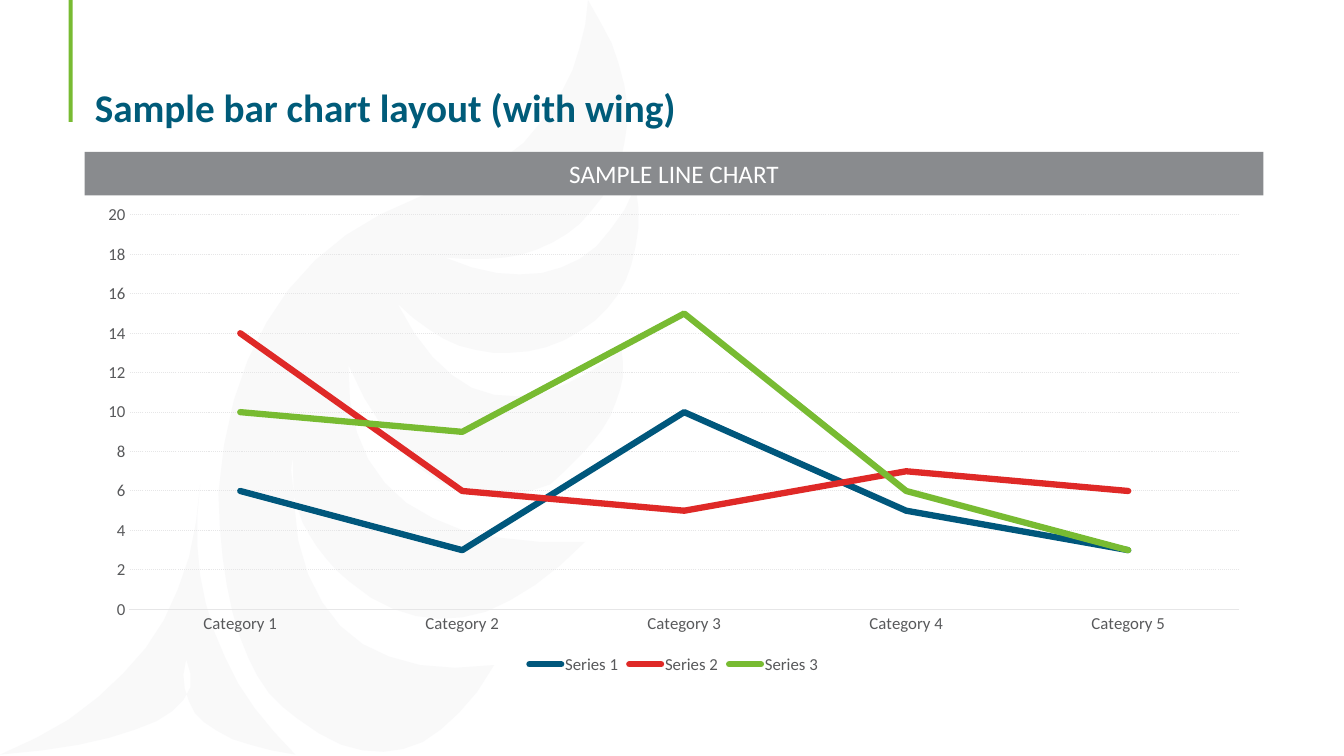
"""Build a title slide with a line chart over a pale wing."""
import pptx
import pptx.chart.data
import pptx.dml.color
import pptx.enum.chart
import pptx.enum.dml
import pptx.enum.shapes
import pptx.enum.text
import pptx.oxml
import pptx.oxml.ns
import pptx.util
from lxml import etree

Pt = pptx.util.Pt
FONT = "Calibri"
GREEN = "78BB32"
TEXT_GREY = "58595B"
RULE_GREY = "E6E6E7"
STEPS = 10
FEATHERS = [
    (353, 475), (288, 535), (212, 513), (171, 454), (156, 352), (206, 207),
    (332, 130), (394, 78), (420, 0), (448, 75), (430, 141), (384, 178),
    (318, 184), (401, 191), (454, 133), (447, 200), (403, 243), (340, 250),
    (284, 217), (353, 282), (444, 250), (436, 297), (393, 346), (312, 343),
    (249, 261), (290, 359), (418, 387), (330, 441), (249, 415), (216, 373),
    (209, 326), (243, 447), (353, 475),
]
WING_TIP = [
    (211, 539), (153, 451), (143, 346), (104, 463), (0, 539),
    (112, 515), (133, 471), (146, 516), (211, 539),
]
CATEGORIES = [f"Category {number}" for number in range(1, 6)]
SERIES = [
    ("Series 1", (6, 3, 10, 5, 3), "00577C"),
    ("Series 2", (14, 6, 5, 7, 6), "DF2927"),
    ("Series 3", (10, 9, 15, 6, 3), GREEN),
]


def rgb(value):
    """Turn a hex string into a colour."""
    return pptx.dml.color.RGBColor.from_string(value)


def paint(shape, color):
    """Give a shape a plain fill with no line or shadow."""
    shape.shadow.inherit = False
    shape.fill.solid()
    shape.fill.fore_color.rgb = rgb(color)
    shape.line.fill.background()


def style_font(font, size, color, bold=False):
    """Set typeface, size, colour and weight."""
    font.name = FONT
    font.size = Pt(size)
    font.bold = bold
    font.color.rgb = rgb(color)


def write(shape, text, size, color, bold=False, align="LEFT", anchor="MIDDLE", spacing=1.0):
    """Put one formatted paragraph into a shape."""
    frame = shape.text_frame
    frame.word_wrap = True
    frame.auto_size = pptx.enum.text.MSO_AUTO_SIZE.NONE
    frame.vertical_anchor = pptx.enum.text.MSO_ANCHOR[anchor]
    paragraph = frame.paragraphs[0]
    paragraph.alignment = pptx.enum.text.PP_ALIGN[align]
    paragraph.line_spacing = spacing
    run = paragraph.add_run()
    run.text = text
    style_font(run.font, size, color, bold)


def add_bar(slide, left, top, width, height, color):
    """Add a plain rectangle."""
    bar = slide.shapes.add_shape(
        pptx.enum.shapes.MSO_SHAPE.RECTANGLE, Pt(left), Pt(top), Pt(width), Pt(height))
    paint(bar, color)
    return bar


def curve_points(knots):
    """Join corners by parabolas that pass through the knots between them."""
    points = []
    for start, middle, end in zip(knots[::2], knots[1::2], knots[2::2]):
        for step in range(1, STEPS + 1):
            t = step / STEPS
            weights = (1 - t) * (1 - 2 * t), 4 * t * (1 - t), t * (2 * t - 1)
            points.append(tuple(
                sum(weight * place for weight, place in zip(weights, places))
                for places in zip(start, middle, end)))
    return points


def add_wing(slide):
    """Add the translucent wing behind the content."""
    outline = slide.shapes.build_freeform(*FEATHERS[0], scale=Pt(1))
    outline.add_line_segments(curve_points(FEATHERS))
    outline.move_to(*WING_TIP[0])
    outline.add_line_segments(curve_points(WING_TIP))
    wing = outline.convert_to_shape()
    paint(wing, "E1E2E4")
    tint = wing._element.spPr.find(".//" + pptx.oxml.ns.qn("a:srgbClr"))
    etree.SubElement(tint, pptx.oxml.ns.qn("a:alpha"), val="20000")


def add_title(slide, text):
    """Place the title in front of the wing and format it."""
    title = slide.shapes.title
    slide.shapes._spTree.append(title._element)
    title.left, title.top, title.width, title.height = Pt(60.5), Pt(29.5), Pt(862.5), Pt(67.5)
    write(title, text, 28, "005B79", bold=True, anchor="BOTTOM", spacing=0.9)


def style_axes(chart):
    """Format both axes and the gridlines."""
    for axis in (chart.category_axis, chart.value_axis):
        axis.major_tick_mark = pptx.enum.chart.XL_TICK_MARK.NONE
        axis.minor_tick_mark = pptx.enum.chart.XL_TICK_MARK.NONE
        style_font(axis.tick_labels.font, 12, TEXT_GREY)
    values = chart.value_axis
    values.minimum_scale, values.maximum_scale, values.major_unit = 0, 20, 2
    values.has_major_gridlines = True
    values.format.line.fill.background()
    grid = values.major_gridlines.format.line
    for rule in (chart.category_axis.format.line, grid):
        rule.color.rgb = rgb(RULE_GREY)
        rule.width = Pt(0.75)
    grid.dash_style = pptx.enum.dml.MSO_LINE.ROUND_DOT


def add_line_chart(slide):
    """Add the line chart with its legend."""
    data = pptx.chart.data.CategoryChartData()
    data.categories = CATEGORIES
    for name, values, _ in SERIES:
        data.add_series(name, values)
    chart = slide.shapes.add_chart(
        pptx.enum.chart.XL_CHART_TYPE.LINE, Pt(60.5), Pt(139.5), Pt(841.5), Pt(345), data).chart
    chart.has_title = False
    style_font(chart.font, 10, TEXT_GREY)
    style_axes(chart)
    chart.has_legend = True
    chart.legend.position = pptx.enum.chart.XL_LEGEND_POSITION.BOTTOM
    chart.legend.include_in_layout = False
    style_font(chart.legend.font, 12, TEXT_GREY)
    chart.plots[0].vary_by_categories = False
    for series, (_, _, color) in zip(chart.plots[0].series, SERIES):
        series.smooth = False
        series.format.line.color.rgb = rgb(color)
        series.format.line.width = Pt(4.5)
        series._element.find(".//" + pptx.oxml.ns.qn("a:ln")).set("cap", "rnd")


def main():
    """Build and save the slide."""
    deck = pptx.Presentation()
    deck.slide_width, deck.slide_height = Pt(960), Pt(540)
    slide = deck.slides.add_slide(deck.slide_layouts.get_by_name("Title Only"))
    add_bar(slide, 49, 0, 3, 87, GREEN)
    add_wing(slide)
    add_title(slide, "Sample bar chart layout (with wing)")
    add_line_chart(slide)
    heading = add_bar(slide, 60.5, 108.5, 842, 31, "898B8E")
    write(heading, "SAMPLE LINE CHART", 18, "FFFFFF", align="CENTER")
    deck.save("out.pptx")


if __name__ == "__main__":
    main()
